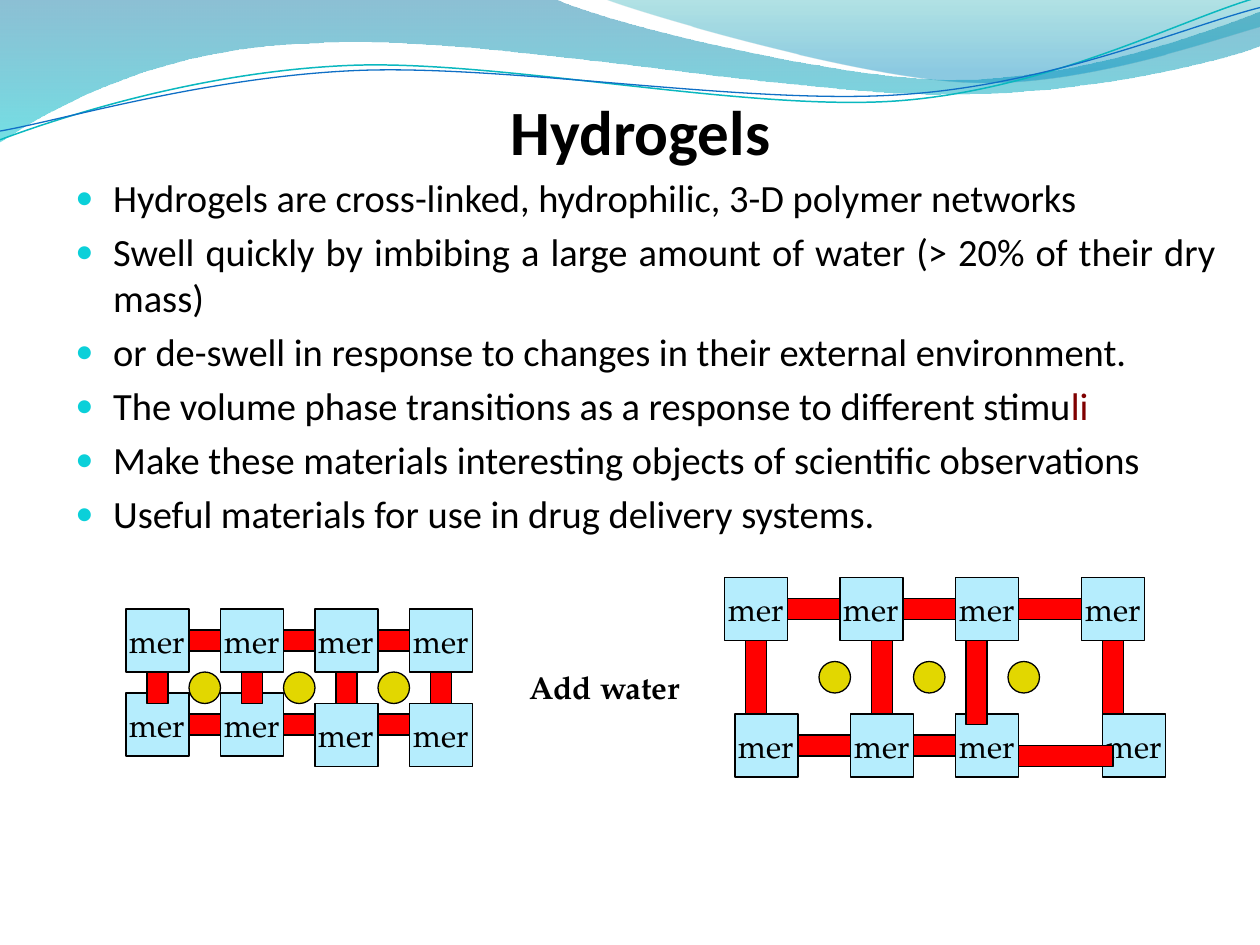
from dataclasses import dataclass
from math import cos, radians, sin

from lxml import etree
from pptx import Presentation
from pptx.dml.color import RGBColor
from pptx.enum.shapes import MSO_SHAPE
from pptx.enum.text import MSO_ANCHOR, MSO_AUTO_SIZE, PP_ALIGN
from pptx.oxml.ns import qn
from pptx.util import Pt

RECTANGLE, OVAL = MSO_SHAPE.RECTANGLE, MSO_SHAPE.OVAL
CENTER, JUSTIFY = PP_ALIGN.CENTER, PP_ALIGN.JUSTIFY
MIDDLE, BOTTOM = MSO_ANCHOR.MIDDLE, MSO_ANCHOR.BOTTOM
NO_FIT, GROW = MSO_AUTO_SIZE.NONE, MSO_AUTO_SIZE.SHAPE_TO_FIT_TEXT
TITLE_ONLY = 5
SANS, SERIF = "Calibri", "TeX Gyre Pagella"
COLORS = {
    "black": "000000", "maroon": "800000", "bullet": "0BD0D9",
    "mer": "B5EDFD", "link": "FF0000", "water": "E2D700",
    "band_top": "0074A1", "band_bottom": "00C6CF",
    "corner_top": "00A1A9", "corner_bottom": "008BBF",
    "teal_line": "0AB8BF", "blue_line": "0F6FC6",
}
MER, BAR, BEAD = 36, 12, 18


@dataclass(frozen=True)
class Wave:
    """An outline on the page: a pair is a line end, six numbers a Bezier curve."""
    box: tuple  # left, top, width, height before rotation
    start: tuple
    segments: tuple
    stops: tuple = ()  # (position, color, opacity in percent)
    line: str = ""
    width: float = 0
    rotation: float = 0


@dataclass(frozen=True)
class Bar:
    """A link given by its centre and length."""
    x: float
    y: float
    length: float
    upright: bool = False


@dataclass(frozen=True)
class Network:
    mers: tuple
    links: tuple
    beads: tuple
    back_links: tuple = ()


WAVES = (
    Wave((-0.7, -0.7, 721.4, 82.1), (0, 0),
         ((316.8, -0.7), (342.7, 12.2, 478.1, 45.4, 545.8, 45.4),
          (614.2, 45.4, 689.8, 18.7, 720, 6.5), (720.7, 25.9),
          (707.8, 31.7, 626.4, 54.7, 537.1, 54),
          (447.8, 54, 275, 20.2, 185, 24.5),
          (92.9, 25.9, 33.1, 59.8, -0.7, 81.4), (0, 0)),
         stops=((0, "band_top", 45), (1, "band_bottom", 55))),
    Wave((344.9, -0.7, 375.1, 50.4), (344.9, -0.7),
         ((366.5, 7.9, 491, 44.6, 553.7, 46.8),
          (616.3, 49.7, 691.9, 23, 720, 15.1), (720, 0), (344.9, -0.7)),
         stops=((0, "corner_top", 30), (0.8, "corner_bottom", 45))),
    Wave((-1.4, 15.8, 721.4, 51.1), (0, 79.9),
         ((34.6, 67, 113.8, 41, 199.4, 37.4),
          (284.4, 33.8, 427, 64.1, 513.4, 57.6),
          (599.8, 51.1, 675.4, 10.8, 718.6, -1.4)),
         line="teal_line", width=0.85, rotation=357.3),
    Wave((-1.4, 21.6, 722.2, 41.8), (0, 74.9),
         ((33.8, 69.1, 118.1, 43.9, 203.8, 40.3),
          (290.2, 36.7, 429.8, 60.5, 516.2, 54),
          (601.9, 48.2, 677.5, 15.1, 720, 4.3)),
         line="blue_line", width=0.75, rotation=357.3),
)
BULLETS = (
    (("Hydrogels are cross-linked, hydrophilic, 3-D polymer networks", "black"),),
    (("Swell quickly by imbibing a large amount of water (> 20% of their dry mass)", "black"),),
    (("or de-swell in response to changes in their external environment.", "black"),),
    (("The volume phase transitions as a response to different stimu", "black"), ("li", "maroon")),
    (("Make these materials interesting objects of scientific observations", "black"),),
    (("Useful materials for use in drug delivery systems.", "black"),),
)
SWOLLEN = Network(
    mers=tuple((x, 330) for x in (414, 480, 546, 618))
    + tuple((x, 408) for x in (420, 486, 546, 630)),
    back_links=(Bar(465, 348, 42),),
    links=(Bar(471, 426, 30), Bar(534, 426, 24), Bar(609, 432, 54),
           Bar(531, 348, 30), Bar(600, 348, 36),
           Bar(636, 387, 42, True), Bar(558, 390, 48, True),
           Bar(504, 387, 42, True), Bar(432, 387, 42, True)),
    beads=tuple((x, 378) for x in (576, 522, 468)),
)
COLUMNS = tuple(72 + 54 * column for column in range(4))
GAPS = tuple(x + MER for x in COLUMNS[:-1])
DRY = Network(
    mers=tuple((x, 348) for x in COLUMNS) + tuple(zip(COLUMNS, (396, 396, 402, 402))),
    links=tuple(Bar(x + 9, y, 18) for y in (414, 366) for x in GAPS)
    + tuple(Bar(x + MER / 2, 393, 18, True) for x in COLUMNS),
    beads=tuple((x, 384) for x in GAPS),
)


def rgb(name: str) -> RGBColor:
    return RGBColor.from_string(COLORS[name])


def add_command(path, tag: str, numbers: tuple, wave: Wave) -> None:
    """Add a path command, its page points turned back into the unrotated box."""
    left, top, width, height = wave.box
    turn = radians(-wave.rotation)
    command = etree.SubElement(path, qn(tag))
    for x, y in zip(numbers[::2], numbers[1::2]):
        across, down = x - left - width / 2, y - top - height / 2
        local_x = across * cos(turn) - down * sin(turn) + width / 2
        local_y = across * sin(turn) + down * cos(turn) + height / 2
        etree.SubElement(command, qn("a:pt"), x=str(Pt(local_x)), y=str(Pt(local_y)))


def add_wave(page, wave: Wave) -> None:
    builder = page.shapes.build_freeform(Pt(wave.start[0]), Pt(wave.start[1]))
    builder.add_line_segments([(Pt(part[-2]), Pt(part[-1])) for part in wave.segments], close=False)
    shape = builder.convert_to_shape()
    shape.left, shape.top, shape.width, shape.height = map(Pt, wave.box)
    shape.rotation = wave.rotation
    shape.shadow.inherit = False
    path = next(shape._element.iter(qn("a:path")))
    for command in list(path):
        path.remove(command)
    path.set("w", str(shape.width))
    path.set("h", str(shape.height))
    add_command(path, "a:moveTo", wave.start, wave)
    for part in wave.segments:
        add_command(path, "a:lnTo" if len(part) == 2 else "a:cubicBezTo", part, wave)
    if wave.line:
        shape.fill.background()
        shape.line.color.rgb = rgb(wave.line)
        shape.line.width = Pt(wave.width)
        return
    etree.SubElement(path, qn("a:close"))
    shape.line.fill.background()
    shape.fill.gradient()
    shape.fill.gradient_angle = 270
    for stop, (position, color, _) in zip(shape.fill.gradient_stops, wave.stops):
        stop.position = position
        stop.color.rgb = rgb(color)
    for node, (_, _, opacity) in zip(shape._element.spPr.iter(qn("a:srgbClr")), wave.stops):
        etree.SubElement(node, qn("a:alpha"), val=str(opacity * 1000))


def add_span(para, text: str, font: str, size: float, color: str = "black", bold: bool = False) -> None:
    span = para.add_run()
    span.text = text
    span.font.name, span.font.size, span.font.bold = font, Pt(size), bold
    span.font.color.rgb = rgb(color)


def add_part(page, kind, left: float, top: float, width: float, height: float, color: str):
    shape = page.shapes.add_shape(kind, Pt(left), Pt(top), Pt(width), Pt(height))
    shape.shadow.inherit = False
    shape.fill.solid()
    shape.fill.fore_color.rgb = rgb(color)
    shape.line.color.rgb = rgb("black")
    shape.line.width = Pt(0.75)
    return shape


def add_bars(page, bars: tuple) -> None:
    for bar in bars:
        shape = add_part(page, RECTANGLE, bar.x - bar.length / 2, bar.y - BAR / 2,
                         bar.length, BAR, "link")
        shape.rotation = 270 if bar.upright else 0


def add_network(page, network: Network) -> None:
    add_bars(page, network.back_links)
    for left, top in network.mers:
        frame = add_part(page, RECTANGLE, left, top, MER, MER, "mer").text_frame
        frame.word_wrap, frame.vertical_anchor = False, MIDDLE
        frame.paragraphs[0].alignment = CENTER
        add_span(frame.paragraphs[0], "mer", SERIF, 18)
    add_bars(page, network.links)
    for left, top in network.beads:
        add_part(page, OVAL, left, top, BEAD, BEAD, "water")


def add_bullet_mark(para) -> None:
    props = para._p.get_or_add_pPr()
    props.set("marL", str(Pt(21.6)))
    props.set("indent", str(-Pt(21.6)))
    color = etree.SubElement(props, qn("a:buClr"))
    etree.SubElement(color, qn("a:srgbClr"), val=COLORS["bullet"])
    etree.SubElement(props, qn("a:buSzPct"), val="95000")
    etree.SubElement(props, qn("a:buFont"), typeface=SANS)
    etree.SubElement(props, qn("a:buChar"), char="•")


def place_title(page) -> None:
    title = page.shapes.title
    title.left, title.top, title.width, title.height = Pt(282), Pt(54), Pt(168), Pt(42)
    frame = title.text_frame
    frame.margin_left = frame.margin_right = frame.margin_bottom = 0
    frame.margin_top = Pt(3.6)
    frame.auto_size, frame.vertical_anchor = NO_FIT, BOTTOM
    frame.paragraphs[0].alignment = CENTER
    add_span(frame.paragraphs[0], "Hydrogels", SANS, 36, bold=True)


def add_body(page) -> None:
    frame = page.shapes.add_textbox(Pt(36), Pt(96), Pt(666), Pt(222)).text_frame
    frame.word_wrap = True
    for index, spans in enumerate(BULLETS):
        para = frame.add_paragraph() if index else frame.paragraphs[0]
        add_bullet_mark(para)
        para.alignment = JUSTIFY
        if index:
            para.space_before = Pt(4.4)
        for text, color in spans:
            add_span(para, text, SANS, 22, color)


def add_caption(page) -> None:
    frame = page.shapes.add_textbox(Pt(288), Pt(378), Pt(115.2), Pt(28.8)).text_frame
    frame.word_wrap, frame.auto_size = True, GROW
    frame.paragraphs[0].alignment = CENTER
    add_span(frame.paragraphs[0], "Add water", SERIF, 18, bold=True)


def main() -> None:
    deck = Presentation()
    deck.slide_width, deck.slide_height = Pt(720), Pt(540)
    page = deck.slides.add_slide(deck.slide_layouts[TITLE_ONLY])
    for wave in WAVES:
        add_wave(page, wave)
    place_title(page)
    add_body(page)
    add_caption(page)
    for network in (SWOLLEN, DRY):
        add_network(page, network)
    deck.save("out.pptx")


if __name__ == "__main__":
    main()
